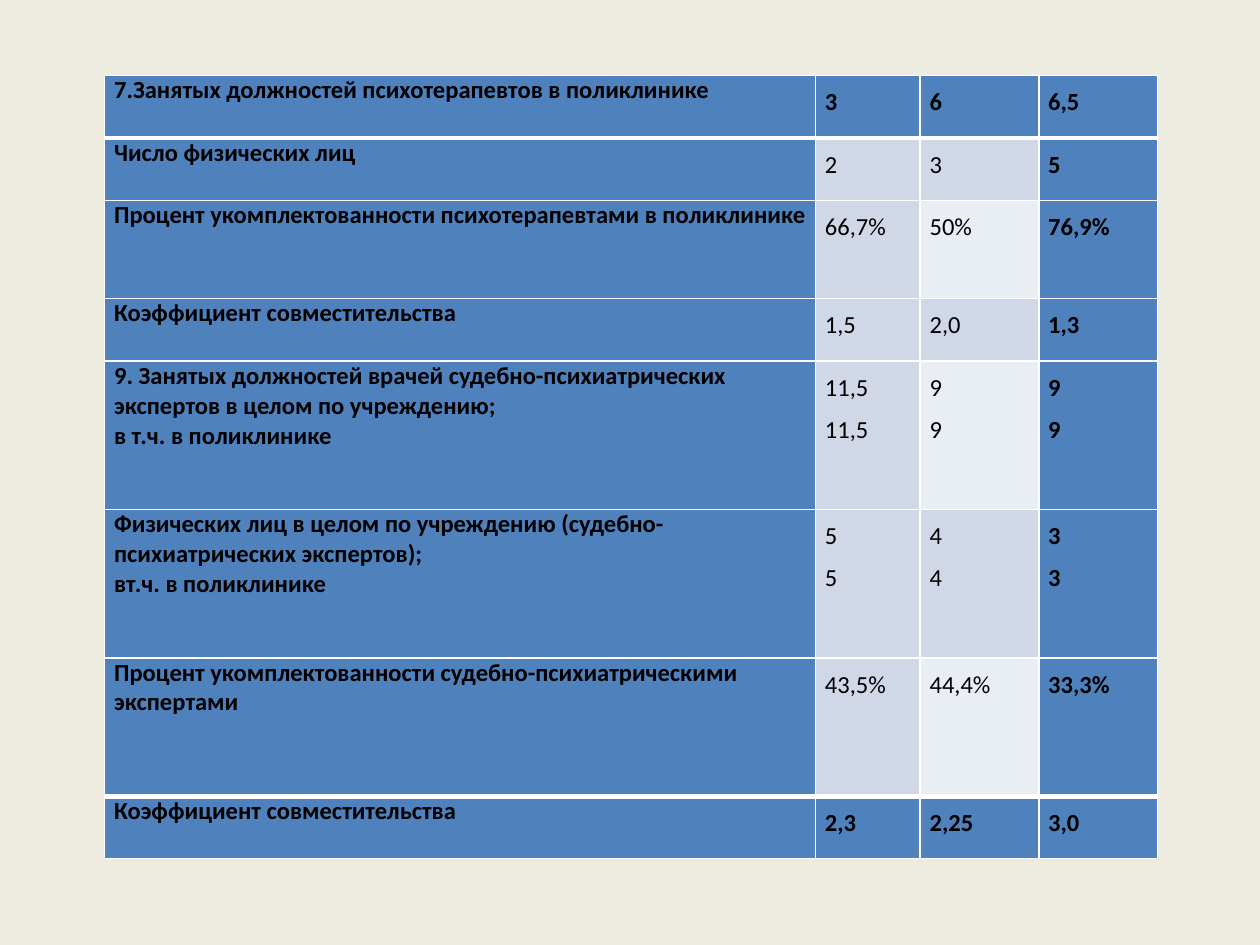
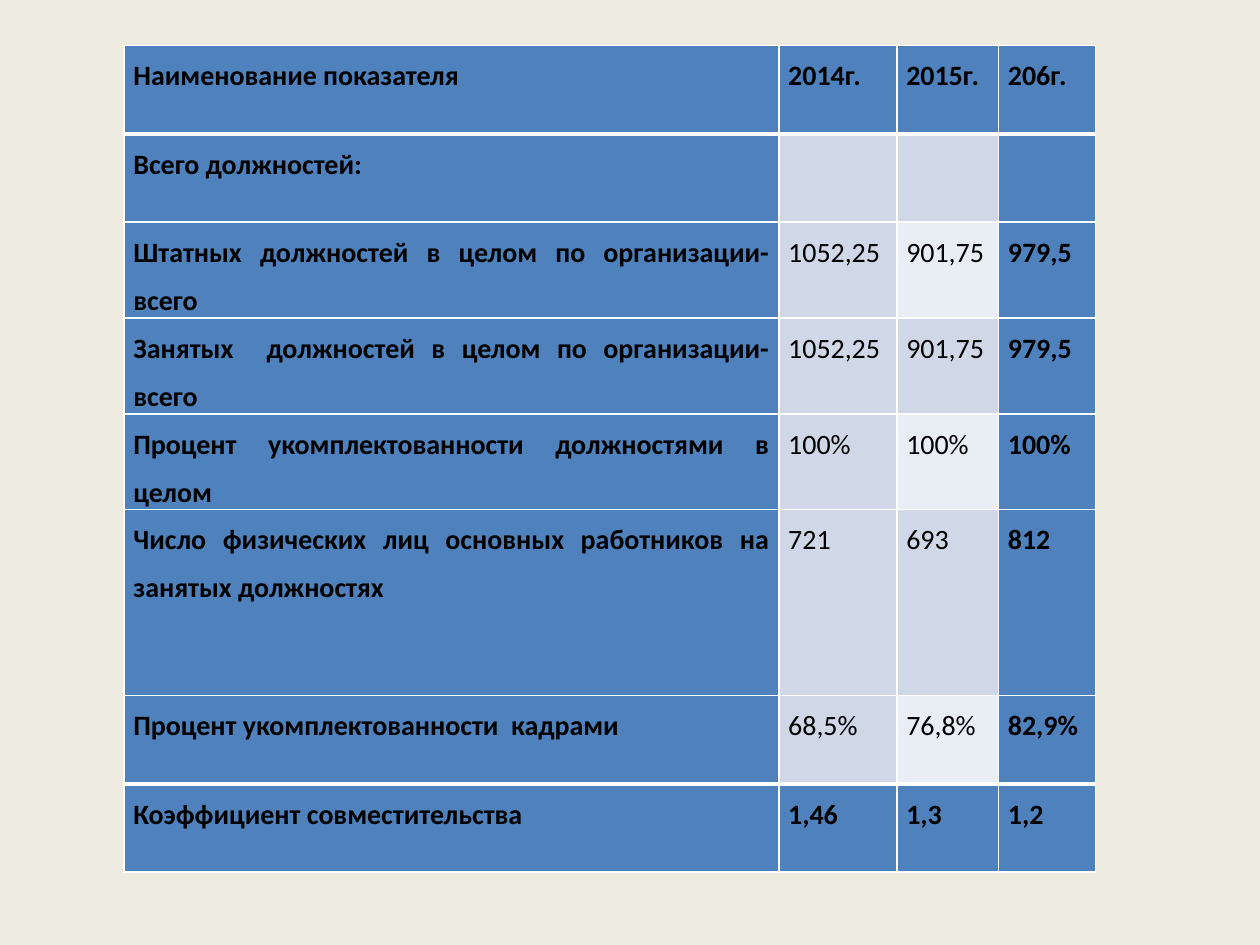
from dataclasses import dataclass

from lxml import etree
from pptx import Presentation
from pptx.dml.color import RGBColor
from pptx.enum.text import PP_ALIGN
from pptx.oxml.ns import qn
from pptx.util import Cm, Pt

LEFT, JUSTIFY = PP_ALIGN.LEFT, PP_ALIGN.JUSTIFY


@dataclass(frozen=True)
class Theme:
    font: str = "Calibri"
    background: str = "EEECE1"
    accent: str = "4F81BD"
    bands: tuple = ("D0D8E8", "E9EDF4")
    border: str = "FFFFFF"
    text: str = "000000"
    thin: float = 1
    thick: float = 3
    small: int = 14
    large: int = 16
    line_spacing: float = 1.4


theme = Theme()


def write(cell, text, size, bold=True, align=JUSTIFY, spacing=theme.line_spacing):
    """Fill a cell with one paragraph for each line of text."""
    tf = cell.text_frame
    for i, line in enumerate(text.split("\n")):
        p = tf.paragraphs[0] if i == 0 else tf.add_paragraph()
        p.alignment, p.line_spacing = align, spacing
        r = p.add_run()
        r.text = line
        r.font.name, r.font.size, r.font.bold = theme.font, Pt(size), bold
        r.font.color.rgb = RGBColor.from_string(theme.text)


def set_borders(cell, top, bottom):
    """Draw the four cell borders; line elements come before the fill."""
    tcPr = cell._tc.get_or_add_tcPr()
    widths = {"a:lnL": theme.thin, "a:lnR": theme.thin, "a:lnT": top, "a:lnB": bottom}
    for i, (tag, width) in enumerate(widths.items()):
        ln = etree.Element(qn(tag), w=str(Pt(width)))
        fill = etree.SubElement(ln, qn("a:solidFill"))
        etree.SubElement(fill, qn("a:srgbClr"), val=theme.border)
        tcPr.insert(i, ln)


# Content of the two staffing tables (lengths in cm)
tables = [
    {
        "left": 2.11, "top": 1.52, "size": theme.small,
        "label_format": {"align": LEFT, "spacing": 1.0},
        "cols": [14.33, 2.11, 2.39, 2.39],
        "heights": [1.26, 1.26, 1.98, 1.26, 2.99, 2.99, 2.79, 1.26],
        "rows": [
            ("7.Занятых должностей психотерапевтов в поликлинике", "3", "6", "6,5"),
            ("Число физических лиц", "2", "3", "5"),
            ("Процент укомплектованности психотерапевтами в поликлинике",
             "66,7%", "50%", "76,9%"),
            ("Коэффициент совместительства", "1,5", "2,0", "1,3"),
            ("9. Занятых должностей врачей судебно-психиатрических экспертов "
             "в целом по учреждению;\nв т.ч. в поликлинике",
             "11,5\n11,5", "9\n9", "9\n9"),
            ("Физических лиц в целом по учреждению (судебно-психиатрических "
             "экспертов);\nвт.ч. в поликлинике", "5\n5", "4\n4", "3\n3"),
            ("Процент укомплектованности судебно-психиатрическими экспертами",
             "43,5%", "44,4%", "33,3%"),
            ("Коэффициент совместительства", "2,3", "2,25", "3,0"),
        ],
    },
    {
        "left": 2.5, "top": 0.92, "size": theme.large,
        "label_format": {},
        "cols": [13.2, 2.38, 2.05, 1.96],
        "heights": [1.78] * 5 + [3.75] + [1.78] * 2,
        "rows": [
            ("Наименование показателя", "2014г.", "2015г.", "206г."),
            ("Всего должностей:", "", "", ""),
            ("Штатных должностей в целом по организации- всего",
             "1052,25", "901,75", "979,5"),
            ("Занятых  должностей в целом по организации-всего",
             "1052,25", "901,75", "979,5"),
            ("Процент укомплектованности должностями в целом",
             "100%", "100%", "100%"),
            ("Число физических лиц основных работников на занятых должностях",
             "721", "693", "812"),
            ("Процент укомплектованности  кадрами", "68,5%", "76,8%", "82,9%"),
            ("Коэффициент совместительства", "1,46", "1,3", "1,2"),
        ],
    },
]

prs = Presentation()
prs.slide_width, prs.slide_height = Cm(25.4), Cm(19.05)

for data in tables:
    # Slide and background
    s = prs.slides.add_slide(prs.slide_layouts[6])
    s.background.fill.solid()
    s.background.fill.fore_color.rgb = RGBColor.from_string(theme.background)

    # Table grid
    rows, cols, heights = data["rows"], data["cols"], data["heights"]
    table = s.shapes.add_table(
        len(rows), len(cols), Cm(data["left"]), Cm(data["top"]),
        Cm(sum(cols)), Cm(sum(heights))).table
    table.first_row = table.horz_banding = False
    for column, width in zip(table.columns, cols):
        column.width = Cm(width)
    for row, height in zip(table.rows, heights):
        row.height = Cm(height)

    # Cells: accent frame around a banded middle
    last_row, last_col = len(rows) - 1, len(cols) - 1
    for r, values in enumerate(rows):
        for c, value in enumerate(values):
            cell = table.cell(r, c)
            framed = r in (0, last_row) or c in (0, last_col)
            band = theme.bands[0] if c == 1 else theme.bands[(r + 1) % 2]
            cell.fill.solid()
            cell.fill.fore_color.rgb = RGBColor.from_string(
                theme.accent if framed else band)
            cell.margin_left = cell.margin_right = Cm(0.19)
            cell.margin_top = cell.margin_bottom = 0
            set_borders(cell,
                        top=theme.thick if r in (1, last_row) else theme.thin,
                        bottom=theme.thick if r in (0, last_row - 1) else theme.thin)
            if value:
                label_format = data["label_format"] if c == 0 else {}
                write(cell, value, data["size"], bold=framed, **label_format)

prs.save("out.pptx")
